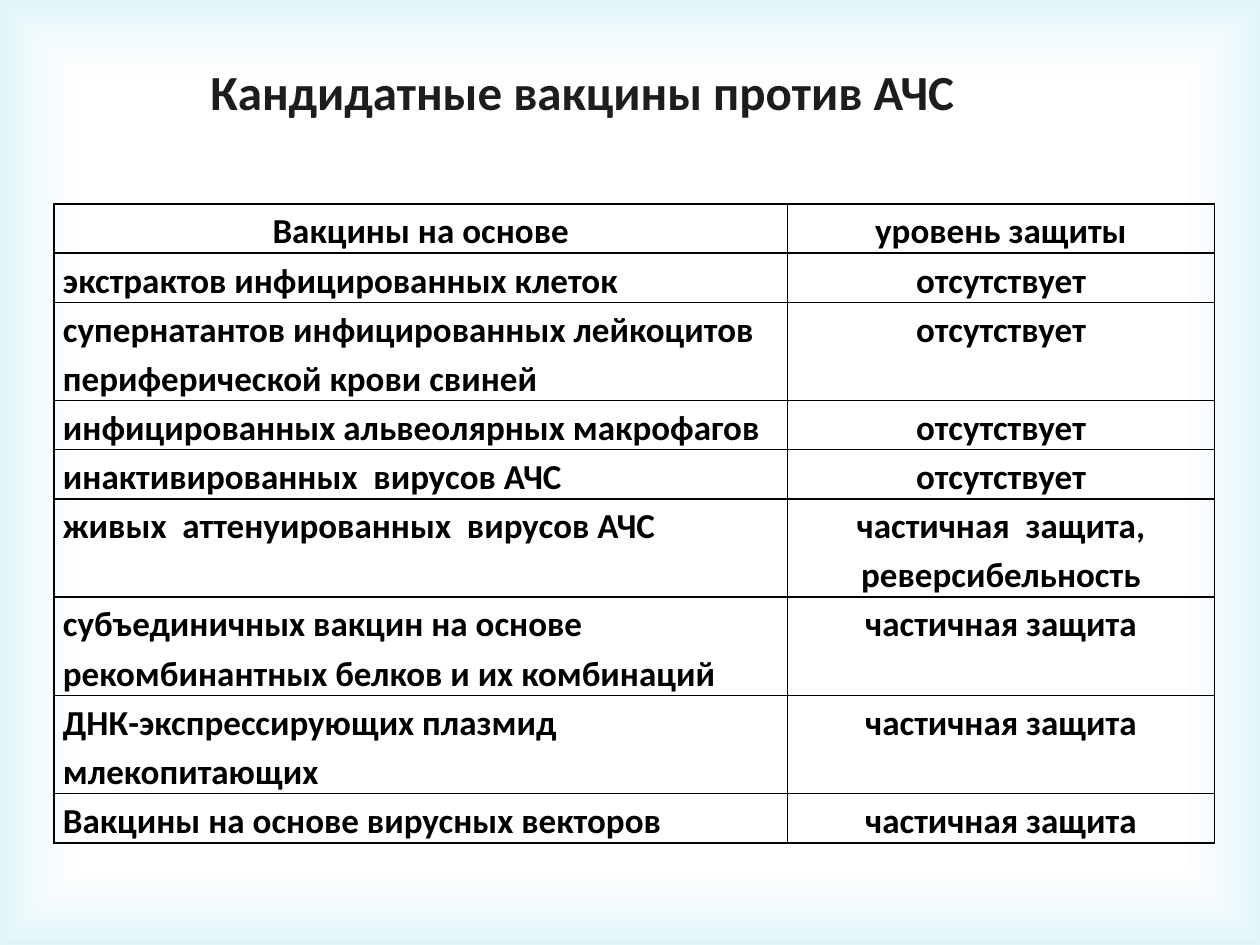
"""Build a slide with a table of candidate vaccines against African swine fever."""
import pptx
import pptx.dml.color
import pptx.enum.shapes
import pptx.enum.text
import pptx.oxml
import pptx.oxml.ns
import pptx.util

Inches = pptx.util.Inches
Pt = pptx.util.Pt
ALIGN = pptx.enum.text.PP_ALIGN
BLACK = pptx.dml.color.RGBColor(0, 0, 0)
WHITE = pptx.dml.color.RGBColor(255, 255, 255)
GLOW = pptx.dml.color.RGBColor(0x78, 0xD6, 0xEA)
FONT = "Calibri"

TITLE = "Кандидатные вакцины против АЧС"
HEADER = ("Вакцины на основе", "уровень защиты", 1)
VACCINES = [
    ("экстрактов инфицированных клеток", "отсутствует", 1),
    ("супернатантов инфицированных лейкоцитов периферической крови свиней", "отсутствует", 2),
    ("инфицированных альвеолярных макрофагов", "отсутствует", 1),
    ("инактивированных  вирусов АЧС", "отсутствует", 1),
    ("живых  аттенуированных  вирусов АЧС", "частичная  защита, реверсибельность", 2),
    ("субъединичных вакцин на основе рекомбинантных белков и их комбинаций", "частичная защита", 2),
    ("ДНК-экспрессирующих плазмид млекопитающих", "частичная защита", 2),
    ("Вакцины на основе вирусных векторов", "частичная защита", 1),
]
COLUMN_WIDTHS = (5.82, 3.39)
LINE_HEIGHT = 0.39
GLOW_STOPS = [(83, WHITE, 11), (100, GLOW, 23)]


def write(paragraph, text, size, align):
    paragraph.alignment = align
    run = paragraph.add_run()
    run.text = text
    run.font.name = FONT
    run.font.size = Pt(size)
    run.font.bold = True
    run.font.color.rgb = BLACK


def add_glow(slide, width, height):
    glow = slide.shapes.add_shape(pptx.enum.shapes.MSO_SHAPE.RECTANGLE, 0, 0, width, height)
    glow.shadow.inherit = False
    glow.line.fill.background()
    glow.fill.background()
    stops = "".join(
        f'<a:gs pos="{pos * 1000}"><a:srgbClr val="{color}"><a:alpha val="{alpha * 1000}"/></a:srgbClr></a:gs>'
        for pos, color, alpha in GLOW_STOPS)
    gradient = pptx.oxml.parse_xml(
        f'<a:gradFill {pptx.oxml.ns.nsdecls("a")} rotWithShape="1"><a:gsLst>{stops}</a:gsLst>'
        '<a:path path="rect"><a:fillToRect l="50000" t="50000" r="50000" b="50000"/></a:path></a:gradFill>')
    properties = glow.element.spPr
    properties.replace(properties.find(pptx.oxml.ns.qn("a:noFill")), gradient)


def add_borders(cell):
    properties = cell._tc.get_or_add_tcPr()
    for index, side in enumerate("LRTB"):
        properties.insert(index, pptx.oxml.parse_xml(
            f'<a:ln{side} {pptx.oxml.ns.nsdecls("a")} w="{Pt(1)}">'
            f'<a:solidFill><a:srgbClr val="{BLACK}"/></a:solidFill></a:ln{side}>'))


def add_vaccine_table(slide):
    rows = [HEADER] + VACCINES
    total_lines = sum(lines for _, _, lines in rows)
    table = slide.shapes.add_table(
        len(rows), len(COLUMN_WIDTHS), Inches(0.43), Inches(1.62),
        Inches(sum(COLUMN_WIDTHS)), Inches(total_lines * LINE_HEIGHT)).table
    table.first_row = False
    table.horz_banding = False
    for column, width in zip(table.columns, COLUMN_WIDTHS):
        column.width = Inches(width)
    for r, (basis, protection, lines) in enumerate(rows):
        table.rows[r].height = Inches(lines * LINE_HEIGHT)
        for c, text in enumerate((basis, protection)):
            cell = table.cell(r, c)
            cell.fill.background()
            add_borders(cell)
            cell.margin_left = cell.margin_right = Inches(0.07)
            cell.margin_top = cell.margin_bottom = 0
            paragraph = cell.text_frame.paragraphs[0]
            paragraph.line_spacing = 1.15
            write(paragraph, text, 20, ALIGN.LEFT if r and c == 0 else ALIGN.CENTER)


def add_title(slide):
    title = slide.shapes.title
    title.left, title.top = Inches(1.49), Inches(0.44)
    title.width, title.height = Inches(6.26), Inches(0.57)
    frame = title.text_frame
    frame.word_wrap = False
    frame.auto_size = pptx.enum.text.MSO_AUTO_SIZE.SHAPE_TO_FIT_TEXT
    frame.vertical_anchor = pptx.enum.text.MSO_ANCHOR.TOP
    write(frame.paragraphs[0], TITLE, 28, ALIGN.CENTER)


def main():
    deck = pptx.Presentation()
    deck.slide_width, deck.slide_height = Inches(10), Inches(7.5)
    slide = deck.slides.add_slide(deck.slide_layouts[5])
    slide.background.fill.solid()
    slide.background.fill.fore_color.rgb = WHITE
    add_glow(slide, deck.slide_width, deck.slide_height)
    add_vaccine_table(slide)
    add_title(slide)
    deck.save("out.pptx")


if __name__ == "__main__":
    main()
